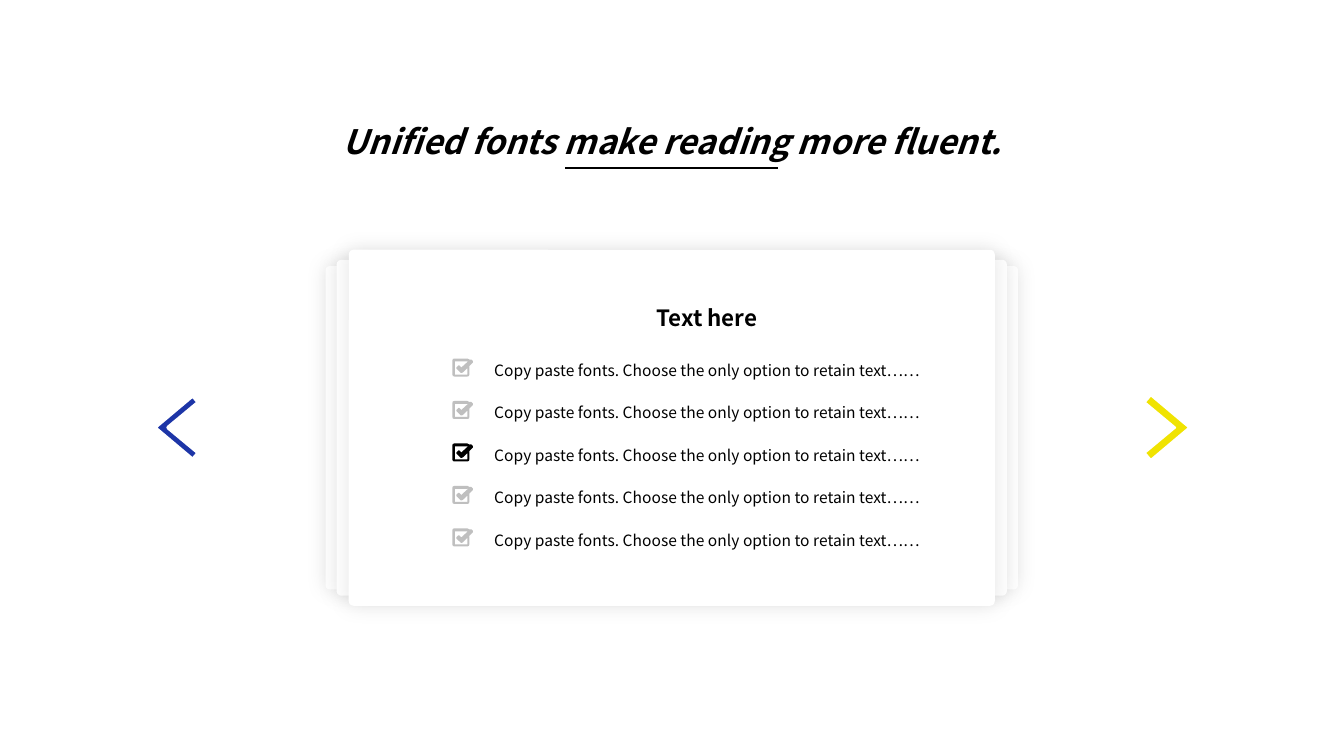
from collections import namedtuple

from lxml.etree import SubElement
from pptx import Presentation
from pptx.dml.color import RGBColor
from pptx.enum.shapes import MSO_CONNECTOR, MSO_SHAPE
from pptx.enum.text import MSO_ANCHOR, PP_ALIGN
from pptx.oxml.ns import qn
from pptx.util import Cm, Pt

Box = namedtuple("Box", "left top width height")

FONT = "Noto Sans CJK SC"
BLACK, WHITE, GREY, BLUE, YELLOW = "000000", "FFFFFF", "BFBFBF", "1D35A7", "F0E301"
ITEM = "Copy paste fonts. Choose the only option to retain text……"
ITEM_COUNT, CHECKED_ITEM = 5, 2
CARD_SIZES = [(17.45, 8.15), (16.89, 8.46), (16.28, 8.97)]
CARD_CENTRE = (16.93, 10.78)

CHEVRON_UNITS = 44
CHEVRON = [(6, 64), (44, 32), (6, 0), (0, 7), (30, 32), (0, 57)]
CHECK_UNITS = 42
TICK = [(35, 2), (38, 2), (41, 5), (41, 8), (34, 15), (30, 19), (22, 27), (19, 29),
        (17, 29), (14, 26), (8, 20), (8, 18), (12, 14), (14, 14), (18, 18), (30, 7), (34, 3)]
FRAME = [(4, 0), (30, 0), (34, 2), (30, 6), (5, 6), (5, 32), (30, 32), (30, 20), (34, 16),
         (34, 32), (33, 35), (30, 36), (4, 36), (1, 35), (0, 32), (0, 4), (1, 1)]


def color(value):
    """Return the colour for a hex string."""
    return RGBColor.from_string(value)


def add_text(page, box, text, size, bold=False, italic=False, anchor=MSO_ANCHOR.TOP, spacing=1.0):
    """Write one centred line of black text in a box."""
    frame = page.shapes.add_textbox(*map(Cm, box)).text_frame
    frame.word_wrap = True
    frame.vertical_anchor = anchor
    para = frame.paragraphs[0]
    para.alignment = PP_ALIGN.CENTER
    para.line_spacing = spacing
    span = para.add_run()
    span.text = text
    font = span.font
    font.name, font.size, font.bold, font.italic = FONT, Pt(size), bold, italic
    font.color.rgb = color(BLACK)
    SubElement(span._r.get_or_add_rPr(), qn("a:ea"), typeface=FONT)


def add_outline(page, box, contours, units, fill, line_width=0):
    """Draw closed contours, measured in units of the box width."""
    first, *others = contours
    builder = page.shapes.build_freeform(*first[0], scale=Cm(box.width) / units)
    builder.add_line_segments(first[1:], close=True)
    for contour in others:
        builder.move_to(*contour[0])
        builder.add_line_segments(contour[1:], close=True)
    shape = builder.convert_to_shape(Cm(box.left), Cm(box.top))
    shape.shadow.inherit = False
    shape.fill.solid()
    shape.fill.fore_color.rgb = color(fill)
    if line_width:
        shape.line.color.rgb = color(WHITE)
        shape.line.width = Pt(line_width)
    else:
        shape.line.fill.background()


def add_title(page, box):
    """Write the slide title and the rule under its middle words."""
    add_text(page, box, "Unified fonts make reading more fluent.", 24,
             bold=True, italic=True, anchor=MSO_ANCHOR.MIDDLE)
    rule_left, rule_top = box.left + 12.37, box.top + 1.57
    rule = page.shapes.add_connector(MSO_CONNECTOR.STRAIGHT, Cm(rule_left), Cm(rule_top),
                                     Cm(rule_left + 5.36), Cm(rule_top))
    rule.line.color.rgb = color(BLACK)
    rule.line.width = Pt(1.5)
    SubElement(rule._element.spPr, qn("a:effectLst"))


def add_card(page, box):
    """Draw one white rounded card with a soft shadow."""
    card = page.shapes.add_shape(MSO_SHAPE.ROUNDED_RECTANGLE, *map(Cm, box))
    card.adjustments[0] = 0.013
    card.fill.solid()
    card.fill.fore_color.rgb = color(WHITE)
    card.line.fill.background()
    card.shadow.inherit = False
    effects = card._element.spPr.find(qn("a:effectLst"))
    shadow = SubElement(effects, qn("a:outerShdw"), blurRad=str(Pt(15)), dist="0", dir="0",
                        algn="ctr", rotWithShape="0")
    tint = SubElement(shadow, qn("a:srgbClr"), val="0D0D0D")
    SubElement(tint, qn("a:alpha"), val="10000")


def add_checklist(page, box):
    """Write the heading and the rows of checked items inside the front card."""
    left, width, row_height = box.left + 3.15, 11.76, 1.07
    add_text(page, Box(left, box.top + 1.19, width, 1.04), "Text here", 16,
             bold=True, anchor=MSO_ANCHOR.MIDDLE)
    for row in range(ITEM_COUNT):
        top = box.top + 2.44 + row * row_height
        add_text(page, Box(left, top, width, row_height), ITEM, 11.1, spacing=1.5)
        add_outline(page, Box(left - 0.54, top + 0.3, 0.53, 0.46), [TICK, FRAME], CHECK_UNITS,
                    BLACK if row == CHECKED_ITEM else GREY)


def add_card_stack(page, centre):
    """Stack the cards around one centre and fill the front one."""
    for width, height in CARD_SIZES:
        box = Box(centre[0] - width / 2, centre[1] - height / 2, width, height)
        add_card(page, box)
    add_checklist(page, box)


def add_arrows(page, box):
    """Draw a chevron at each end of the box."""
    size = 1.12
    mirrored = [(CHEVRON_UNITS - x, y) for x, y in CHEVRON]
    right = box.left + box.width - size
    add_outline(page, Box(right, box.top, size, box.height), [CHEVRON], CHEVRON_UNITS, YELLOW, 1.5)
    add_outline(page, Box(box.left, box.top, size, box.height), [mirrored], CHEVRON_UNITS, BLUE, 3)


def main():
    """Build the slide and save it."""
    deck = Presentation()
    deck.slide_width, deck.slide_height = Cm(33.87), Cm(19.05)
    page = deck.slides.add_slide(deck.slide_layouts[6])
    add_card_stack(page, CARD_CENTRE)
    add_arrows(page, Box(3.89, 9.96, 26.08, 1.65))
    add_title(page, Box(1.88, 2.67, 30.12, 1.75))
    deck.save("out.pptx")


if __name__ == "__main__":
    main()
